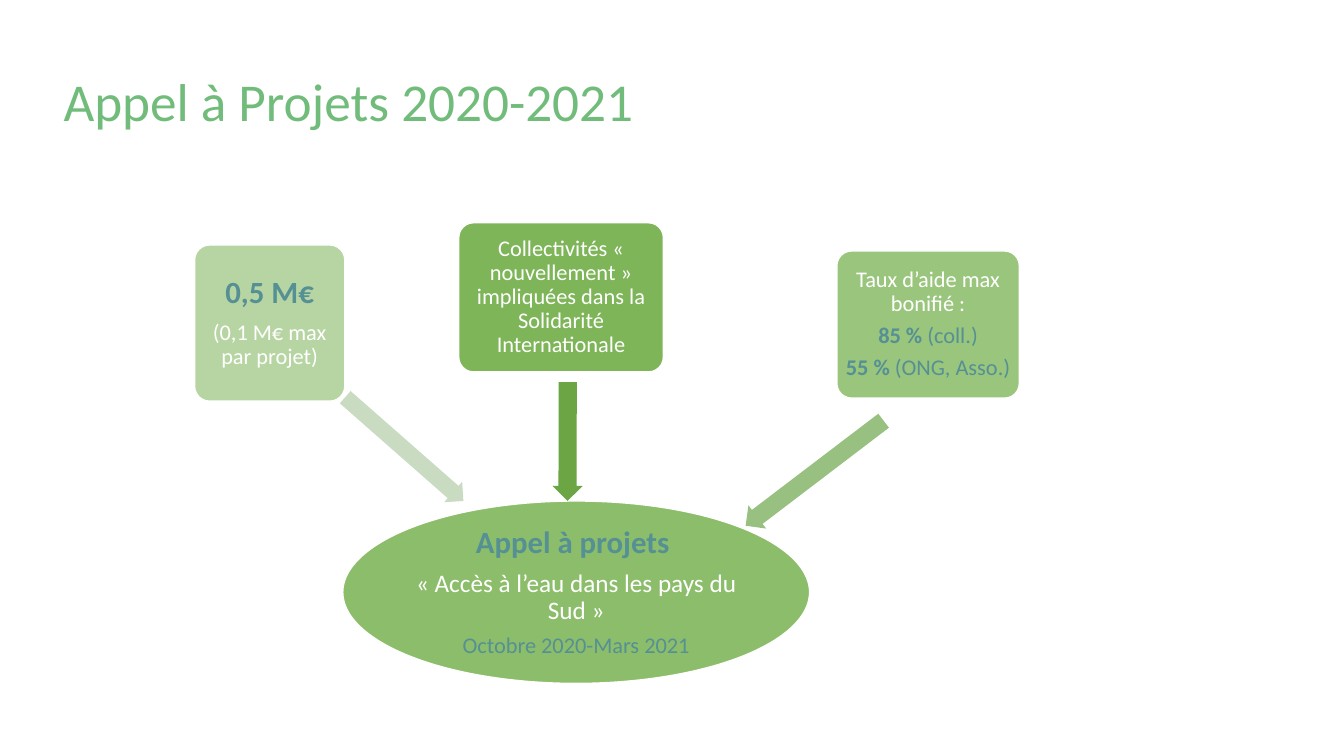
from lxml import etree
from pptx import Presentation
from pptx import util as u
from pptx.dml.color import RGBColor
from pptx.enum import shapes, text
from pptx.oxml.ns import qn

GREEN, TEAL, WHITE = "70AD47", "559094", "FFFFFF"


def px(n):
    return u.Inches(n / 100)


def rgb(value):
    return RGBColor.from_string(value)


def apply(target, values):
    for name, value in values.items():
        setattr(target, name, value)


class Deck:
    font = "Calibri"
    spacing = 0.9
    space_after = 0.35

    def __init__(self, width, height):
        self.prs = Presentation()
        apply(self.prs, {"slide_width": px(width), "slide_height": px(height)})
        self.s = self.prs.slides.add_slide(self.prs.slide_layouts[5])

    def run(self, p, words, size, color, bold=False):
        r = p.add_run()
        r.text = words
        apply(r.font, {"name": self.font, "size": u.Pt(size), "bold": bold})
        r.font.color.rgb = rgb(color)

    def frame(self, tf, inset_x, inset_y):
        apply(tf, {"word_wrap": True, "auto_size": text.MSO_AUTO_SIZE.NONE,
                   "vertical_anchor": text.MSO_ANCHOR.MIDDLE,
                   "margin_left": px(inset_x), "margin_right": px(inset_x),
                   "margin_top": px(inset_y), "margin_bottom": px(inset_y)})

    def title(self, box, words, size, color):
        sp = self.s.shapes.title
        apply(sp, dict(zip(("left", "top", "width", "height"), map(px, box))))
        self.frame(sp.text_frame, 10, 5)
        p = sp.text_frame.paragraphs[0]
        apply(p, {"alignment": text.PP_ALIGN.LEFT, "line_spacing": self.spacing})
        self.run(p, words, size, color)

    def shape(self, kind, box, fill, opacity=100):
        sp = self.s.shapes.add_shape(kind, *map(px, box))
        sp.shadow.inherit = False
        sp.fill.solid()
        sp.fill.fore_color.rgb = rgb(fill)
        if opacity < 100:
            color = sp.fill._xPr.find(qn("a:solidFill"))[0]
            etree.SubElement(color, qn("a:alpha"), val=str(opacity * 1000))
        return sp

    def bubble(self, kind, box, opacity, inset, paragraphs):
        sp = self.shape(kind, box, GREEN, opacity)
        if kind == shapes.MSO_SHAPE.ROUNDED_RECTANGLE:
            sp.adjustments[0] = 0.1
        sp.line.color.rgb = rgb(WHITE)
        sp.line.width = u.Pt(1)
        tf = sp.text_frame
        self.frame(tf, inset, inset)
        for i, (size, color, runs) in enumerate(paragraphs):
            p = tf.add_paragraph() if i else tf.paragraphs[0]
            apply(p, {"alignment": text.PP_ALIGN.CENTER, "line_spacing": self.spacing,
                      "space_after": u.Pt(size * self.space_after)})
            for words, bold in runs:
                self.run(p, words, size, color, bold)

    def arrow(self, box, rotation, fill):
        sp = self.shape(shapes.MSO_SHAPE.LEFT_ARROW, box, fill)
        sp.adjustments[0] = 0.6
        sp.adjustments[1] = 0.5
        sp.rotation = rotation
        sp.line.fill.background()


def main():
    deck = Deck(1333, 750)
    rounded = shapes.MSO_SHAPE.ROUNDED_RECTANGLE
    deck.title((53, 53, 1049, 100), "Appel à Projets 2020-2021", 38, "71BC7B")
    deck.bubble(shapes.MSO_SHAPE.OVAL, (340, 497, 463, 181), 80, 2, [
        (22, TEAL, [("Appel à projets ", True)]),
        (18, WHITE, [("« Accès à l’eau dans les pays du Sud »", False)]),
        (16, TEAL, [("Octobre 2020-Mars 2021", False)]),
    ])
    deck.arrow((504, 423, 118, 30), 270.1, "6BA544")
    deck.bubble(rounded, (455, 221, 203, 148), 90, 3, [
        (16, WHITE, [("Collectivités « nouvellement » impliquées dans la "
                      "Solidarité Internationale", False)]),
    ])
    deck.arrow((722, 455, 172, 29), 322.7, "98C181")
    deck.bubble(rounded, (830, 249, 181, 146), 70, 3, [
        (16, WHITE, [("Taux d’aide max bonifié :", False)]),
        (16, TEAL, [("85 %", True), (" (coll.)", False)]),
        (16, TEAL, [("55 %", True), (" (ONG, Asso.)", False)]),
    ])
    deck.arrow((323, 432, 156, 27), 221.3, "C9DBC1")
    deck.bubble(rounded, (193, 243, 149, 155), 50, 5, [
        (22, TEAL, [("0,5 M€", True)]),
        (16, WHITE, [("(0,1 M€ max par projet)", False)]),
    ])
    deck.prs.save("out.pptx")


if __name__ == "__main__":
    main()
